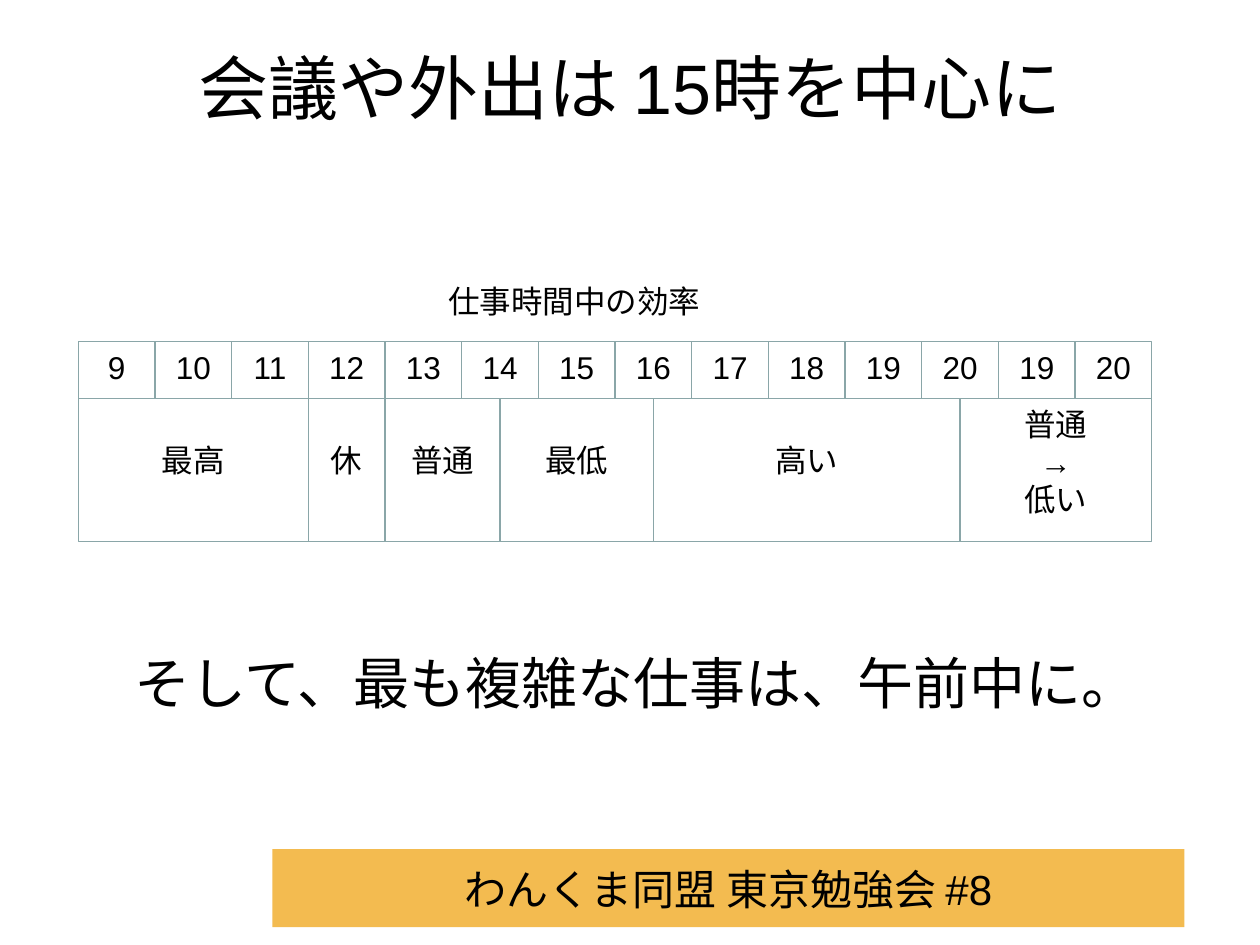
from dataclasses import dataclass

from pptx import Presentation
from pptx import util as u
from pptx.dml.color import RGBColor
from pptx.enum import shapes, text
from pptx.slide import Slide


def color(value):
    return RGBColor.from_string(value)


@dataclass
class Painter:
    """Holds the style and the current slide; lengths are in centimetres."""
    page: Slide
    font: str = "Arial"
    ink: str = "000000"
    border: str = "8AA6A8"

    def set_text(self, box, lines, size, font=None, align=text.PP_ALIGN.CENTER,
                 anchor=text.MSO_ANCHOR.TOP, inset=0.13):
        """Fill a shape with one paragraph per line; inset is the top margin."""
        frame = box.text_frame
        frame.word_wrap = True
        frame.vertical_anchor = anchor
        frame.margin_top = u.Cm(inset)
        frame.text = lines
        for para in frame.paragraphs:
            para.alignment = align
            para.font.name = font or self.font
            para.font.size = u.Pt(size)
            para.font.color.rgb = color(self.ink)

    def label(self, area, lines, size, **style):
        box = self.page.shapes.add_textbox(*map(u.Cm, area))
        self.set_text(box, lines, size, **style)

    def block(self, area, lines, size, fill=None, outlined=True, **style):
        box = self.page.shapes.add_shape(
            shapes.MSO_SHAPE.RECTANGLE, *map(u.Cm, area))
        box.shadow.inherit = False
        if fill:
            box.fill.solid()
            box.fill.fore_color.rgb = color(fill)
        else:
            box.fill.background()
        if outlined:
            box.line.color.rgb = color(self.border)
            box.line.width = u.Pt(0.75)
        else:
            box.line.fill.background()
        self.set_text(box, lines, size, **style)

    def row(self, left, top, height, cells, **style):
        """Place (text, width, fill) cells side by side."""
        for lines, width, fill in cells:
            self.block((left, top, width, height), lines, 18, fill, **style)
            left += width


def main():
    deck = Presentation()
    deck.slide_width, deck.slide_height = u.Cm(25.4), u.Cm(19.05)
    painter = Painter(deck.slides.add_slide(deck.slide_layouts[6]))
    middle = text.MSO_ANCHOR.MIDDLE

    painter.block((5.49, 17.12, 18.39, 1.57), "わんくま同盟 東京勉強会 #8", 24,
                  fill="F3BB50", outlined=False, anchor=middle)
    painter.label((1.27, 0.76, 22.86, 1.96), "会議や外出は 15時を中心に", 40,
                  anchor=middle)
    painter.label((1.4, 5.16, 22.86, 11.86),
                  "そして、最も複雑な仕事は、午前中に。", 32, inset=7.92)

    left, hours_top, hours_height = 1.58, 6.88, 1.15
    levels_top, levels_height = hours_top + hours_height, 2.89
    hours = [*range(9, 21), 19, 20]
    hour_width = 21.64 / len(hours)

    # Efficiency level, length in hours, fill
    levels = [("最高", 3, None), ("休", 1, None), ("普通", 1.5, None),
              ("最低", 2, "FFFFFF"), ("高い", 4, None)]
    widths = [(level, span * hour_width, fill) for level, span, fill in levels]
    painter.row(left, levels_top, levels_height, widths, inset=0.87)
    evening = left + sum(width for _, width, _ in widths)
    painter.row(evening, levels_top, levels_height,
                [("普通\n→\n低い", 2.5 * hour_width, None)])
    painter.row(left, hours_top, hours_height,
                [(str(hour), hour_width, None) for hour in hours])
    painter.label((8.79, 5.56, 8.51, 1.14), "仕事時間中の効率", 18,
                  font="Calibri", align=text.PP_ALIGN.LEFT)

    deck.save("out.pptx")


if __name__ == "__main__":
    main()
